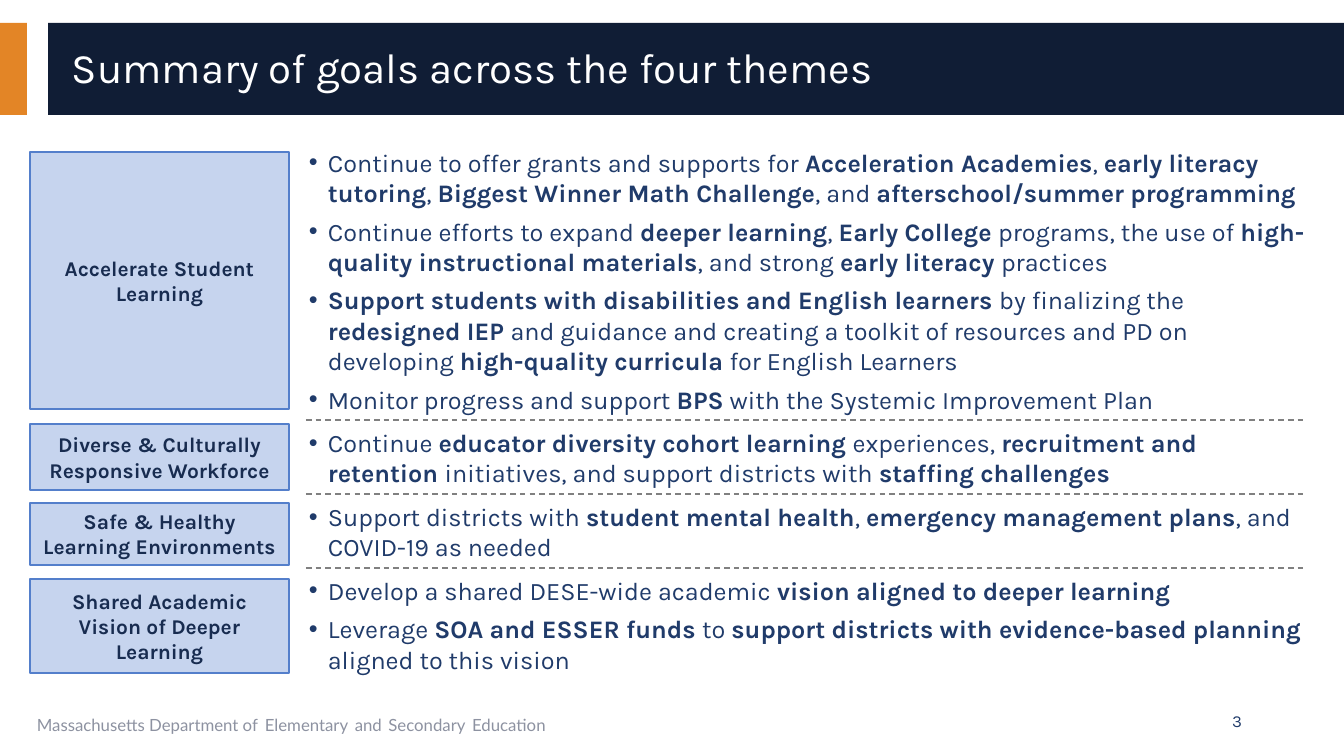
"""Build the slide that sums up goals across the four themes."""
from lxml.etree import SubElement
from pptx import Presentation
from pptx.dml.color import RGBColor
from pptx.enum.dml import MSO_LINE
from pptx.enum.shapes import MSO_CONNECTOR, MSO_SHAPE
from pptx.enum.text import MSO_ANCHOR, PP_ALIGN
from pptx.oxml.ns import qn
from pptx.util import Pt

PX = 914400 / 100.8
NAVY, ORANGE, BLUE, INK = "101D35", "E38526", "203B6A", "182C50"
PALE, EDGE, GREY, WHITE = "C6D4EE", "547FCB", "808080", "FFFFFF"

TITLE = "Summary of goals across the four themes"
FOOTER = "Massachusetts Department of* *Elementary* *and* *Secondary* *Education"
BANDS = [(0, 27, ORANGE), (48, 1296, NAVY)]
THEMES = [
    ("Accelerate Student Learning", 152, 257, [
        "Continue to offer grants and supports for *Acceleration Academies*, "
        "*early literacy tutoring*, *Biggest Winner Math Challenge*, and "
        "*afterschool/summer programming*",
        "Continue efforts to expand *deeper learning*, *Early College *programs, "
        "the use of *high-quality instructional materials*, and strong "
        "*early literacy *practices",
        "*Support students with disabilities and English learners *by finalizing "
        "the *redesigned IEP *and guidance and creating a toolkit of resources "
        "and PD on developing *high-quality curricula *for English Learners",
        "Monitor progress and support *BPS* with the Systemic Improvement Plan"]),
    ("Diverse & Culturally Responsive Workforce", 424, 66, [
        "Continue *educator diversity cohort learning *experiences, "
        "*recruitment and retention *initiatives, and support districts with "
        "*staffing challenges*"]),
    ("Safe & Healthy Learning Environments", 503, 62, [
        "Support districts with *student mental health*, "
        "*emergency management plans*, and COVID-19 as needed"]),
    ("Shared Academic Vision of Deeper Learning", 579, 94, [
        "Develop a shared DESE-wide academic *vision aligned to deeper learning*",
        "Leverage *SOA and ESSER funds *to *support districts with "
        "evidence-based planning* aligned to this vision"]),
]
RULE_TOP, RULE_STEP = 420, 74


def px(*nums):
    return [round(n * PX) for n in nums]


def tint(code):
    return RGBColor.from_string(code)


def write(para, text, size=18, color=BLUE, face="Karla", bold=False, align=None,
          before=0, line=None, dot=False, alt=None):
    """Fill a paragraph; each * turns the alt format on or off."""
    if dot:
        props = para._p.get_or_add_pPr()
        props.set("marL", str(px(19)[0]))
        props.set("indent", str(px(-19)[0]))
        SubElement(props, qn("a:buFont"), typeface="Arial")
        SubElement(props, qn("a:buChar"), char="•")
    para.alignment = align
    if before:
        para.space_before = Pt(before)
    if line:
        para.line_spacing = line
    for i, part in enumerate(text.split("*")):
        if not part:
            continue
        run = para.add_run()
        run.text = part
        font = run.font
        font.name, font.size, font.bold = face, Pt(size), bold
        font.color.rgb = tint(color)
        if i % 2:
            for key, val in (alt or {"bold": True}).items():
                setattr(font, key, val)


def frame(box, anchor=MSO_ANCHOR.MIDDLE):
    box.text_frame.word_wrap = True
    box.text_frame.vertical_anchor = anchor
    return box.text_frame


def rect(left, top, width, height, fill, edge=None):
    shape = shapes.add_shape(MSO_SHAPE.RECTANGLE, *px(left, top, width, height))
    shape.shadow.inherit = False
    shape.fill.solid()
    shape.fill.fore_color.rgb = tint(fill)
    if edge:
        shape.line.color.rgb = tint(edge)
        shape.line.width = Pt(1)
    else:
        shape.line.fill.background()
    return shape


def label(left, top, width, height, text, anchor=MSO_ANCHOR.MIDDLE, **style):
    box = shapes.add_textbox(*px(left, top, width, height))
    write(frame(box, anchor).paragraphs[0], text, **style)


deck = Presentation()
deck.slide_width, deck.slide_height = px(1344, 756)
shapes = deck.slides.add_slide(deck.slide_layouts[6]).shapes

for left, width, fill in BANDS:
    rect(left, 23, width, 92, fill)
label(62, 32, 1254, 75, TITLE, size=30, color=WHITE, line=0.9)
label(27, 701, 851, 40, FOOTER, MSO_ANCHOR.TOP, size=12, color="8D92A1",
      face="Lato", alt={"size": Pt(18)})
label(950, 701, 302, 40, "3", size=12, align=PP_ALIGN.RIGHT)

goals = frame(shapes.add_textbox(*px(299, 142, 1018, 577)), MSO_ANCHOR.TOP)
for n, (name, top, height, items) in enumerate(THEMES):
    card = rect(30, top, 259, height, PALE, EDGE)
    write(frame(card).paragraphs[0], name, size=15, color=INK, bold=True,
          align=PP_ALIGN.CENTER)
    for i, item in enumerate(items):
        first = n == i == 0
        para = goals.paragraphs[0] if first else goals.add_paragraph()
        write(para, item, dot=True, before=0 if first else 6 if i else 9.5)

for n in range(len(THEMES) - 1):
    y = RULE_TOP + n * RULE_STEP
    rule = shapes.add_connector(MSO_CONNECTOR.STRAIGHT, *px(306, y, 1304, y))
    rule.line.color.rgb = tint(GREY)
    rule.line.width = Pt(1)
    rule.line.dash_style = MSO_LINE.DASH
    SubElement(rule._element.spPr, qn("a:effectLst"))

deck.save("out.pptx")
